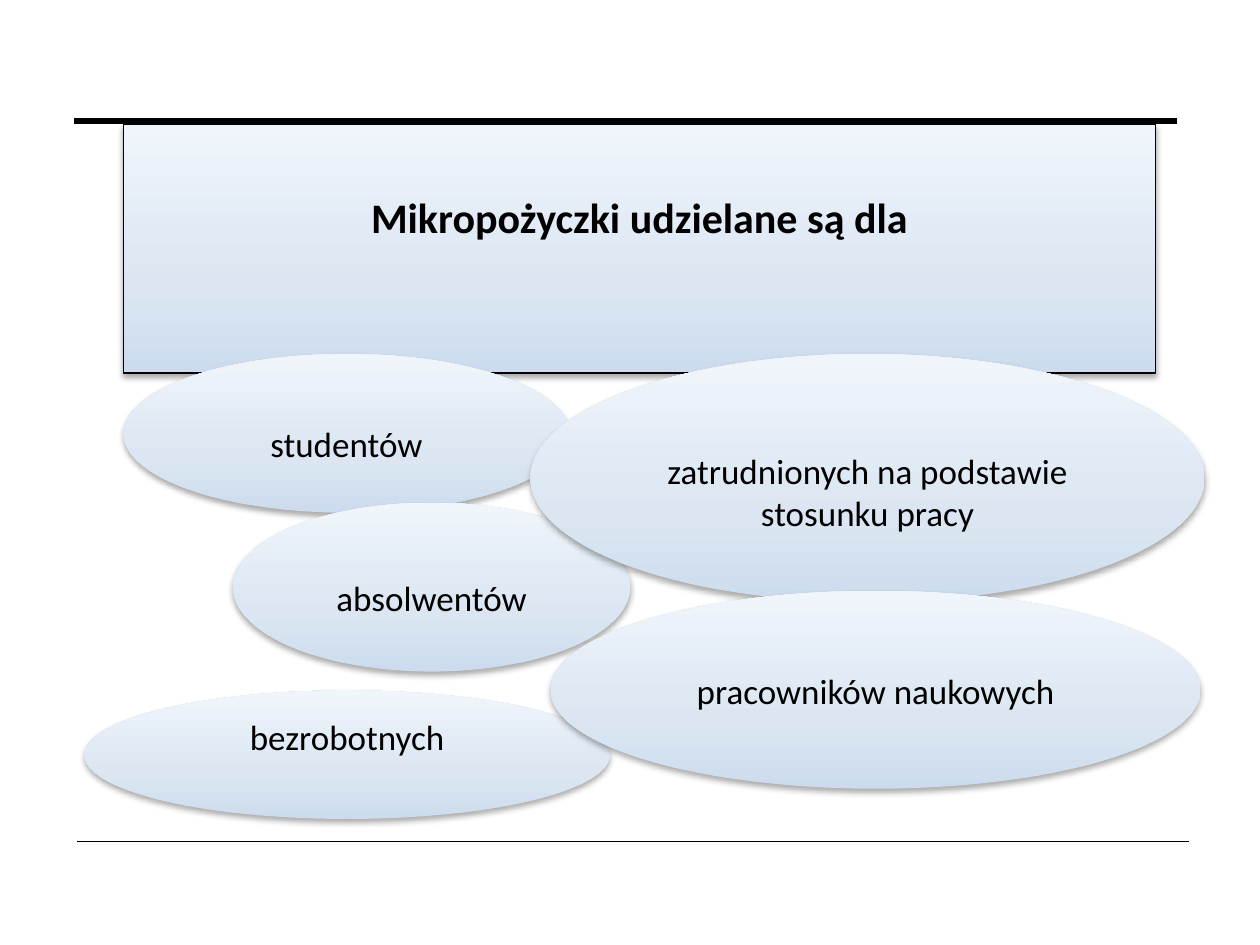
"""Build the slide listing the groups that can receive micro-loans."""
from copy import deepcopy

from lxml.etree import SubElement
from pptx import Presentation
from pptx.dml.color import RGBColor
from pptx.enum.shapes import MSO_CONNECTOR as LINE, MSO_SHAPE as SHAPE
from pptx.enum.text import MSO_ANCHOR as ANCHOR, MSO_AUTO_SIZE as FIT, PP_ALIGN as ALIGN
from pptx.oxml.ns import qn
from pptx.util import Inches, Pt

BLACK = RGBColor(0x00, 0x00, 0x00)
WHITE = RGBColor(0xFF, 0xFF, 0xFF)
GRADIENT = [
    (0, RGBColor(0xCC, 0xDC, 0xEE)),
    (0.35, RGBColor(0xDB, 0xE6, 0xF2)),
    (1, RGBColor(0xF0, 0xF5, 0xFB)),
]


def write_text(shape, text, size=20, bold=False, top=0.05):
    box = shape.text_frame
    box.word_wrap = True
    box.auto_size = FIT.NONE
    box.vertical_anchor = ANCHOR.TOP
    box.margin_left = box.margin_right = Inches(0.1)
    box.margin_top, box.margin_bottom = Inches(top), Inches(0.05)
    para = box.paragraphs[0]
    para.alignment = ALIGN.CENTER
    para.space_before = Pt(0)
    span = para.add_run()
    span.text = text
    span.font.name = "Calibri"
    span.font.size = Pt(size)
    span.font.bold = bold
    span.font.color.rgb = BLACK


def paint_oval(shape):
    fill = shape.fill
    fill.gradient()
    fill.gradient_angle = 90
    stops = shape.element.spPr.find(qn("a:gradFill")).find(qn("a:gsLst"))
    stops.append(deepcopy(stops[0]))
    for stop, (position, color) in zip(fill.gradient_stops, GRADIENT):
        stop.position = position
        stop.color.rgb = color
    shape.line.fill.background()
    shape.shadow.inherit = False
    effects = shape.element.spPr.find(qn("a:effectLst"))
    shadow = SubElement(effects, qn("a:outerShdw"), blurRad=str(Pt(3.5)),
                        dist=str(Pt(2.2)), dir="5400000", rotWithShape="0")
    shade = SubElement(shadow, qn("a:srgbClr"), val=str(BLACK))
    SubElement(shade, qn("a:alpha"), val="32000")


deck = Presentation()
deck.slide_width, deck.slide_height = Inches(10), Inches(7.5)
page = deck.slides.add_slide(deck.slide_layouts[5])
page.background.fill.solid()
page.background.fill.fore_color.rgb = WHITE

for left, right, height, width in [(0.61, 9.44, 6.68, 0.25), (0.59, 9.34, 0.96, 3)]:
    rule = page.shapes.add_connector(
        LINE.STRAIGHT, Inches(left), Inches(height), Inches(right), Inches(height))
    rule.line.color.rgb = BLACK
    rule.line.width = Pt(width)
    SubElement(rule.element.spPr, qn("a:effectLst"))

heading = page.shapes.title
page.shapes.element.append(heading.element)
heading.left, heading.top = Inches(0.98), Inches(0.99)
heading.width, heading.height = Inches(8.19), Inches(1.97)
outline = SubElement(heading.element.spPr, qn("a:prstGeom"), prst="flowChartConnector")
SubElement(outline, qn("a:avLst"))
paint_oval(heading)
heading.line.color.rgb = BLACK
heading.line.width = Pt(0.75)
write_text(heading, "Mikropożyczki udzielane są dla", size=24, bold=True, top=0.53)

groups = [
    ("studentów", 0.98, 2.81, 3.54, 1.26, 0.36),
    ("absolwentów", 1.85, 3.99, 3.15, 1.34, 0.39),
    ("bezrobotnych", 0.67, 5.48, 4.17, 1.02, 0.05),
    ("zatrudnionych na podstawie stosunku pracy", 4.21, 2.81, 5.35, 1.97, 0.47),
    ("pracowników naukowych", 4.37, 4.69, 5.16, 1.57, 0.39),
]
for text, left, top, width, height, inset in groups:
    oval = page.shapes.add_shape(
        SHAPE.OVAL, Inches(left), Inches(top), Inches(width), Inches(height))
    paint_oval(oval)
    write_text(oval, text, top=inset)

deck.save("out.pptx")
